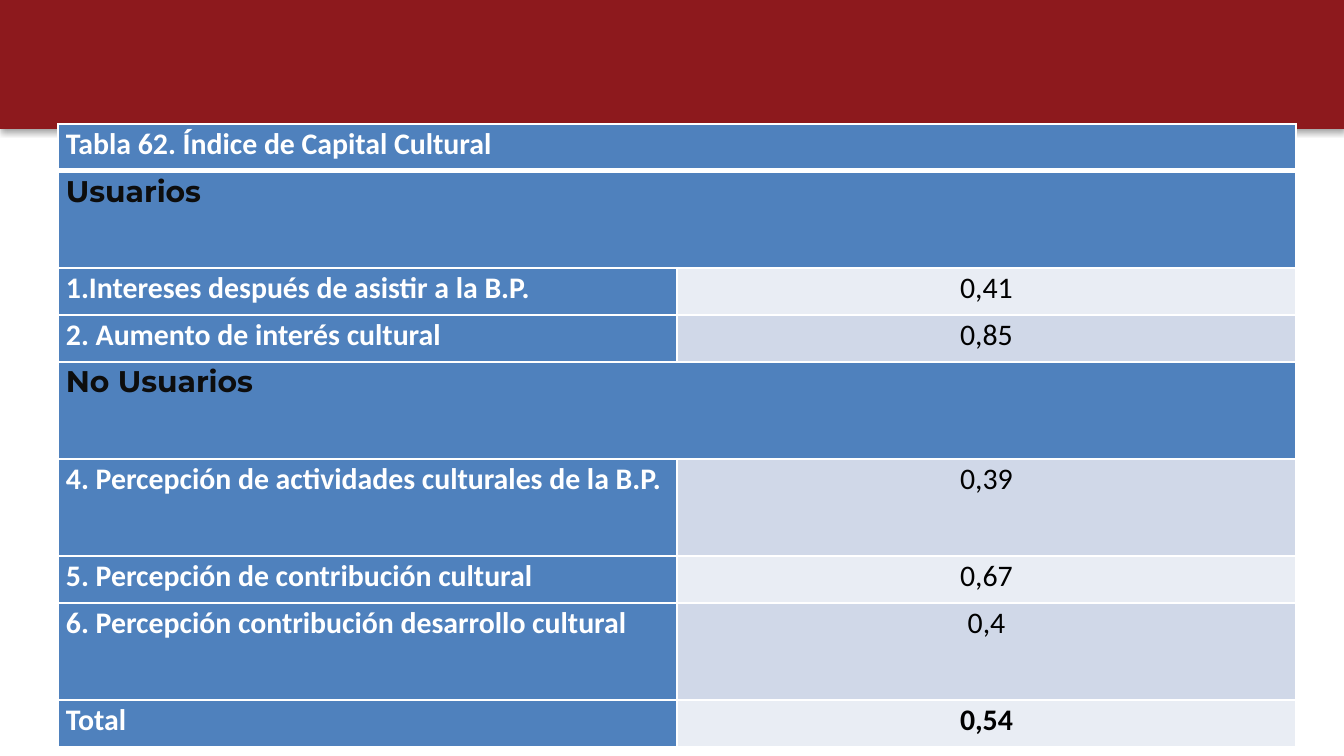
from dataclasses import dataclass
from typing import Optional

from lxml import etree
from pptx import Presentation
from pptx import util as u
from pptx.dml import color
from pptx.enum import shapes, text
from pptx.oxml import ns

SCALE = 9144000 / 1344


@dataclass(frozen=True)
class Theme:
    band: str = "8D191D"
    head: str = "4F81BD"
    light: str = "E9EDF4"
    dark: str = "D0D8E8"
    white: str = "FFFFFF"
    black: str = "000000"
    section: str = "0D0D0D"
    body_font: str = "Calibri"
    section_font: str = "Montserrat"
    size: int = 16
    thin: int = 1
    thick: int = 3


@dataclass(frozen=True)
class IndexRow:
    label: str
    value: Optional[str] = None
    height: int = 47
    section: bool = False
    bold_value: bool = False


THEME = Theme()
ROWS = [
    IndexRow("Tabla 62. Índice de Capital Cultural"),
    IndexRow("Usuarios", height=97, section=True),
    IndexRow("1.Intereses después de asistir a la B.P.", "0,41"),
    IndexRow("2. Aumento de interés cultural", "0,85"),
    IndexRow("No Usuarios", height=97, section=True),
    IndexRow("4. Percepción de actividades culturales de la B.P.", "0,39", 97),
    IndexRow("5. Percepción de contribución cultural", "0,67"),
    IndexRow("6. Percepción contribución desarrollo cultural", "0,4", 97),
    IndexRow("Total", "0,54", bold_value=True),
]


def px(length: int) -> u.Emu:
    return u.Emu(round(length * SCALE))


def rgb(value: str) -> color.RGBColor:
    return color.RGBColor.from_string(value)


def add_element(parent, tag: str, **values):
    attributes = {name: str(value) for name, value in values.items()}
    return etree.SubElement(parent, ns.qn(tag), attributes)


def draw_band(page) -> None:
    band = page.shapes.add_shape(shapes.MSO_SHAPE.RECTANGLE, 0, 0, px(1344), px(128))
    band.fill.solid()
    band.fill.fore_color.rgb = rgb(THEME.band)
    band.line.color.rgb = rgb(THEME.band)
    band.line.width = u.Pt(0.75)
    band.shadow.inherit = False
    effects = band.element.spPr.find(ns.qn("a:effectLst"))
    shadow = add_element(effects, "a:outerShdw", blurRad=u.Pt(3.1), dist=u.Pt(1.8),
                         dir=5400000, rotWithShape=0)
    tint = add_element(shadow, "a:srgbClr", val=THEME.black)
    add_element(tint, "a:alpha", val=35000)


def style_cell(cell, fill: str, top: int, bottom: int) -> None:
    properties = cell._tc.get_or_add_tcPr()
    widths = {"L": THEME.thin, "R": THEME.thin, "T": top, "B": bottom}
    for side, width in widths.items():
        line = add_element(properties, f"a:ln{side}", w=u.Pt(width))
        add_element(add_element(line, "a:solidFill"), "a:srgbClr", val=THEME.white)
    margins = {"margin_left": px(8), "margin_right": px(8),
               "margin_top": 0, "margin_bottom": 0}
    for name, value in margins.items():
        setattr(cell, name, value)
    cell.fill.solid()
    cell.fill.fore_color.rgb = rgb(fill)


def write_cell(cell, content: str, ink: str, font: str, bold: bool,
               align: text.PP_ALIGN) -> None:
    para = cell.text_frame.paragraphs[0]
    para.alignment = align
    para.line_spacing = 1.06
    span = para.add_run()
    span.text = content
    for name, value in {"name": font, "size": u.Pt(THEME.size), "bold": bold}.items():
        setattr(span.font, name, value)
    span.font.color.rgb = rgb(ink)


def draw_table(page, rows: list[IndexRow]) -> None:
    height = sum(row.height for row in rows)
    table = page.shapes.add_table(len(rows), 2, px(58), px(124), px(1238), px(height)).table
    for column in table.columns:
        column.width = px(619)
    for index, row in enumerate(rows):
        table.rows[index].height = px(row.height)
        label, value = table.cell(index, 0), table.cell(index, 1)
        stripe = THEME.dark if index % 2 else THEME.light
        top = THEME.thick if index == 1 else THEME.thin
        bottom = THEME.thick if index == 0 else THEME.thin
        style_cell(label, THEME.head, top, bottom)
        style_cell(value, stripe if row.value else THEME.head, top, bottom)
        ink = THEME.section if row.section else THEME.white
        font = THEME.section_font if row.section else THEME.body_font
        write_cell(label, row.label, ink, font, True, text.PP_ALIGN.LEFT)
        if row.value:
            write_cell(value, row.value, THEME.black, THEME.body_font,
                       row.bold_value, text.PP_ALIGN.CENTER)
        else:
            label.merge(value)


def main() -> None:
    deck = Presentation()
    deck.slide_width, deck.slide_height = px(1344), px(756)
    page = deck.slides.add_slide(deck.slide_layouts[6])
    draw_band(page)
    draw_table(page, ROWS)
    deck.save("out.pptx")


if __name__ == "__main__":
    main()
